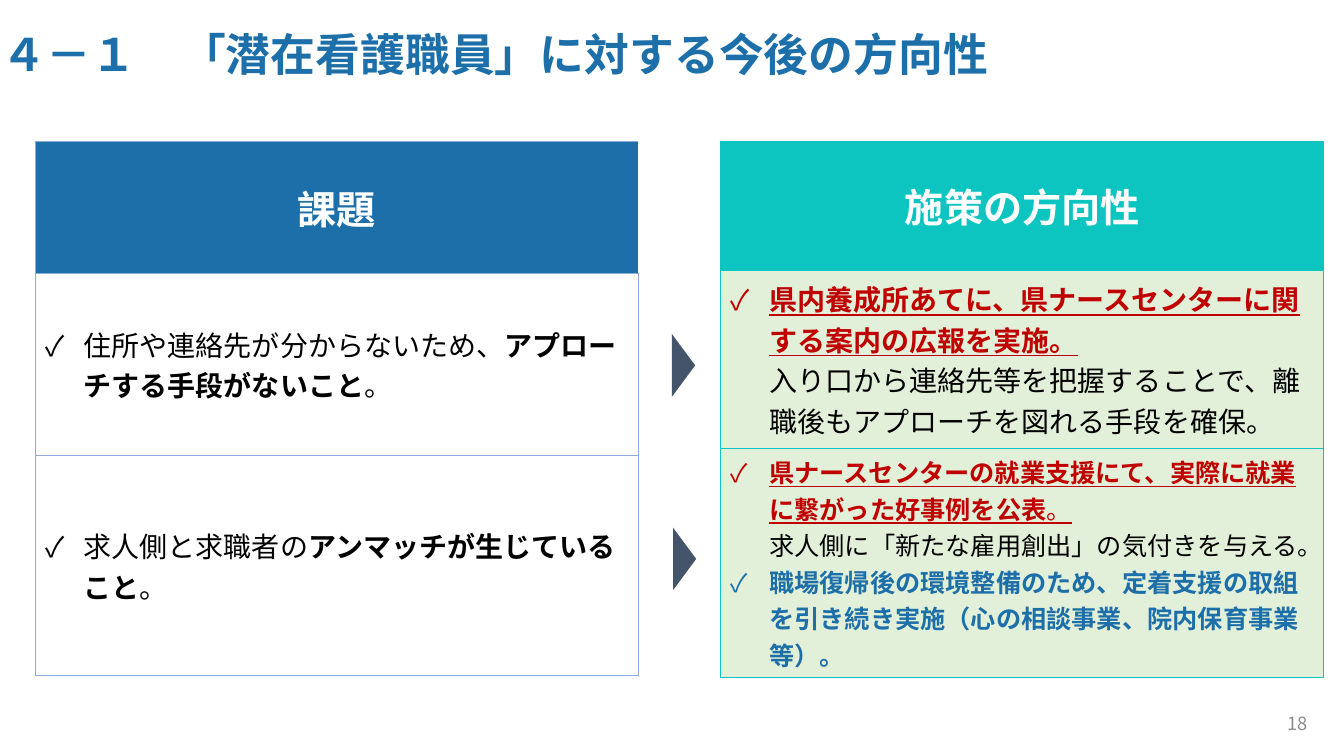
from lxml import etree
from pptx import Presentation
from pptx.dml.color import RGBColor
from pptx.enum.shapes import MSO_SHAPE
from pptx.enum.text import MSO_ANCHOR, PP_ALIGN
from pptx.oxml.ns import qn
from pptx.util import Inches, Pt

TRIANGLE = MSO_SHAPE.ISOSCELES_TRIANGLE
TOP, MIDDLE = MSO_ANCHOR.TOP, MSO_ANCHOR.MIDDLE
LEFT, CENTER, RIGHT = PP_ALIGN.LEFT, PP_ALIGN.CENTER, PP_ALIGN.RIGHT

FONT = "Noto Sans CJK JP"
WHITE, BLACK, GREY, SLATE = "FFFFFF", "000000", "8C8C8C", "44546A"
BLUE, PALE_BLUE, TEAL, PALE_GREEN, RED = "1D6FA9", "8FAADC", "0CC4C0", "E2F0D9", "C00000"

# Run formats
BODY = {"size": Pt(20)}
BODY_BOLD = {"size": Pt(20), "bold": True}
BODY_KEY = {"size": Pt(20), "bold": True, "underline": True}
SMALL = {"size": Pt(18)}
SMALL_BOLD = {"size": Pt(18), "bold": True}
SMALL_KEY = {"size": Pt(18), "bold": True, "underline": True}
SMALL_UNDERLINED = {"size": Pt(18), "underline": True}
HEADING = {"size": Pt(28), "bold": True}
TITLE = {"size": Pt(32), "bold": True}
PAGE_NUMBER = {"size": Pt(13)}

# Each cell is a list of paragraphs, each paragraph a list of (text, colour, format)
ISSUES = [
    [[("住所や連絡先が分からないため、", BLACK, BODY),
      ("アプローチする手段がないこと", BLACK, BODY_BOLD),
      ("。", BLACK, BODY)]],
    [[("求人側と求職者の", BLACK, BODY),
      ("アンマッチが生じていること", BLACK, BODY_BOLD),
      ("。", BLACK, BODY)]],
]
MEASURES = [
    [[("県内養成所あてに、県ナースセンターに関する案内の広報を実施。\n", RED, BODY_KEY),
      ("入り口から連絡先等を把握することで、離職後もアプローチを図れる手段を確保。", BLACK, BODY)]],
    [[("県ナースセンターの就業支援にて、実際に就業に繋がった好事例を公表", RED, SMALL_KEY),
      ("。\n", RED, SMALL_UNDERLINED),
      ("求人側に「新たな雇用創出」の気付きを与える。", BLACK, SMALL)],
     [("職場復帰後の環境整備のため、定着支援の取組を引き続き実施（心の相談事業、院内保育事業等）。",
       BLUE, SMALL_BOLD)]],
]


def color(hex_text):
    return RGBColor.from_string(hex_text)


def add_run(paragraph, text, text_color, text_format):
    run = paragraph.add_run()
    run.text = text.rstrip("\n")
    run.font.name = FONT
    run.font.color.rgb = color(text_color)
    for name, value in text_format.items():
        setattr(run.font, name, value)
    etree.SubElement(run.font._element, qn("a:ea"), typeface=FONT)
    if text.endswith("\n"):
        paragraph.add_line_break()


def add_check_mark(paragraph):
    properties = paragraph._p.get_or_add_pPr()
    properties.set("marL", str(Inches(0.38)))
    properties.set("indent", str(Inches(-0.38)))
    etree.SubElement(properties, qn("a:buFont"), typeface=FONT)
    etree.SubElement(properties, qn("a:buChar"), char="✓")


def set_borders(cell, border_colors):
    properties = cell._tc.get_or_add_tcPr()
    for side in "LRTB":
        line = etree.SubElement(properties, qn("a:ln" + side), w=str(Pt(1)))
        fill = etree.SubElement(line, qn("a:solidFill"))
        etree.SubElement(fill, qn("a:srgbClr"), val=border_colors[side])


def fill_cell(cell, paragraphs, fill_color, border_colors, is_heading):
    set_borders(cell, border_colors)
    if fill_color:
        cell.fill.solid()
        cell.fill.fore_color.rgb = color(fill_color)
    else:
        cell.fill.background()
    cell.vertical_anchor = MIDDLE
    for index, runs in enumerate(paragraphs):
        frame = cell.text_frame
        paragraph = frame.add_paragraph() if index else frame.paragraphs[0]
        if is_heading:
            paragraph.alignment = CENTER
        else:
            add_check_mark(paragraph)
        for run in runs:
            add_run(paragraph, *run)


def add_column(slide, left, row_heights, heading, cells, heading_fill, body_fill,
               border, heading_right):
    frame = slide.shapes.add_table(len(row_heights), 1, Inches(left), Inches(1.4),
                                   Inches(5.98), Inches(sum(row_heights)))
    table = frame.table
    table.first_row = table.horz_banding = False
    contents = [[[(heading, WHITE, HEADING)]]] + cells
    for index, (height, paragraphs) in enumerate(zip(row_heights, contents)):
        table.rows[index].height = Inches(height)
        is_heading = index == 0
        borders = dict.fromkeys("LRTB", border)
        if is_heading:
            borders["R"] = heading_right
        fill_cell(table.cell(index, 0), paragraphs,
                  heading_fill if is_heading else body_fill, borders, is_heading)


def add_pointer(slide, left, top):
    shape = slide.shapes.add_shape(TRIANGLE, Inches(left), Inches(top),
                                   Inches(0.62), Inches(0.23))
    shape.rotation = 90
    shape.shadow.inherit = False
    shape.fill.solid()
    shape.fill.fore_color.rgb = color(SLATE)
    shape.line.fill.background()


def add_text(slide, left, top, width, height, run, alignment, anchor):
    box = slide.shapes.add_textbox(Inches(left), Inches(top), Inches(width), Inches(height))
    frame = box.text_frame
    frame.word_wrap = True
    frame.vertical_anchor = anchor
    paragraph = frame.paragraphs[0]
    paragraph.alignment = alignment
    add_run(paragraph, *run)


def main():
    presentation = Presentation()
    presentation.slide_width, presentation.slide_height = Inches(13.33), Inches(7.5)
    slide = presentation.slides.add_slide(presentation.slide_layouts[6])

    # Pointers from issues to measures
    add_pointer(slide, 6.47, 3.51)
    add_pointer(slide, 6.48, 5.43)

    # Issues and measures
    add_column(slide, 0.35, [1.31, 1.81, 2.18], "課題", ISSUES, BLUE, None, PALE_BLUE, WHITE)
    add_column(slide, 7.15, [1.28, 1.77, 2.25], "施策の方向性", MEASURES, TEAL, PALE_GREEN,
               TEAL, TEAL)

    # Title and page number
    add_text(slide, -0.08, 0.22, 12.54, 0.64,
             ("４－１　「潜在看護職員」に対する今後の方向性", BLUE, TITLE), LEFT, TOP)
    add_text(slide, 10.07, 6.97, 3, 0.4, ("18", GREY, PAGE_NUMBER), RIGHT, MIDDLE)

    presentation.save("out.pptx")


if __name__ == "__main__":
    main()
